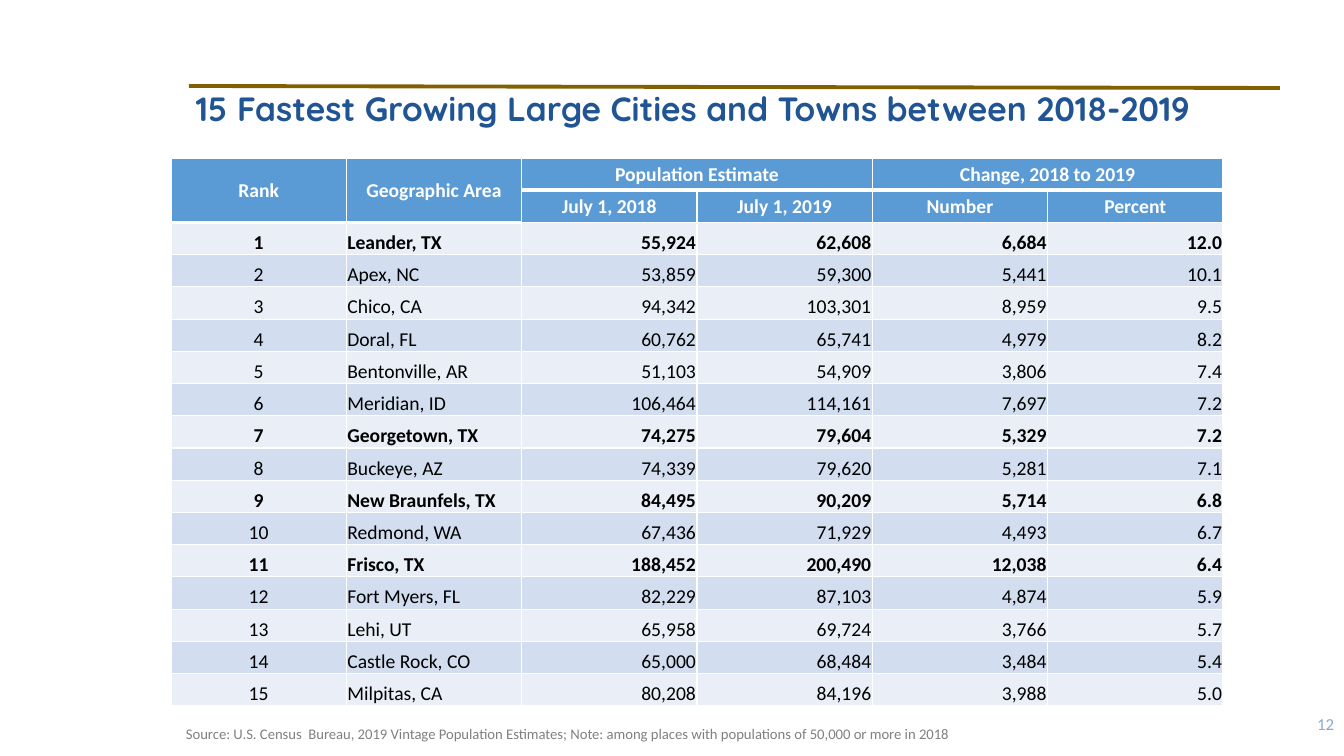
from lxml.etree import SubElement
from pptx import Presentation
from pptx.dml.color import RGBColor
from pptx.enum.shapes import MSO_CONNECTOR
from pptx.enum.text import MSO_ANCHOR, PP_ALIGN
from pptx.oxml.ns import qn
from pptx.util import Pt

UNIT = 914400 / 100.8
LEFT, MID, RIGHT = PP_ALIGN.LEFT, PP_ALIGN.CENTER, PP_ALIGN.RIGHT

HEADS = [
    ["Rank", "Geographic Area", "Population Estimate", "", "Change, 2018 to 2019", ""],
    ["", "", "July 1, 2018", "July 1, 2019", "Number", "Percent"],
]
MERGES = [(0, 0, 1, 0), (0, 1, 1, 1), (0, 2, 0, 3), (0, 4, 0, 5)]
CITIES = [
    ["Leander, TX", "55,924", "62,608", "6,684", "12.0"],
    ["Apex, NC", "53,859", "59,300", "5,441", "10.1"],
    ["Chico, CA", "94,342", "103,301", "8,959", "9.5"],
    ["Doral, FL", "60,762", "65,741", "4,979", "8.2"],
    ["Bentonville, AR", "51,103", "54,909", "3,806", "7.4"],
    ["Meridian, ID", "106,464", "114,161", "7,697", "7.2"],
    ["Georgetown, TX", "74,275", "79,604", "5,329", "7.2"],
    ["Buckeye, AZ", "74,339", "79,620", "5,281", "7.1"],
    ["New Braunfels, TX", "84,495", "90,209", "5,714", "6.8"],
    ["Redmond, WA", "67,436", "71,929", "4,493", "6.7"],
    ["Frisco, TX", "188,452", "200,490", "12,038", "6.4"],
    ["Fort Myers, FL", "82,229", "87,103", "4,874", "5.9"],
    ["Lehi, UT", "65,958", "69,724", "3,766", "5.7"],
    ["Castle Rock, CO", "65,000", "68,484", "3,484", "5.4"],
    ["Milpitas, CA", "80,208", "84,196", "3,988", "5.0"],
]


def px(num):
    return round(num * UNIT)


def tint(code):
    return RGBColor.from_string(code)


def put(frame, text, size=14, color="000000", bold=False, font="Calibri",
        align=LEFT, space=None):
    para = frame.paragraphs[0]
    para.alignment = align
    para.line_spacing = space
    run = para.add_run()
    run.text = text
    run.font.name = font
    run.font.size = Pt(size)
    run.font.bold = bold
    run.font.color.rgb = tint(color)


def label(slide, area, text, anchor=MSO_ANCHOR.TOP, **style):
    frame = slide.shapes.add_textbox(*map(px, area)).text_frame
    frame.word_wrap = True
    frame.vertical_anchor = anchor
    put(frame, text, **style)


def rule(slide, ends, color, width):
    line = slide.shapes.add_connector(MSO_CONNECTOR.STRAIGHT, *map(px, ends))
    line.line.color.rgb = tint(color)
    line.line.width = Pt(width)
    SubElement(line._element.spPr, qn("a:effectLst"))


def edge(cell, base):
    props = cell._tc.get_or_add_tcPr()
    for side, width in (("L", 1), ("R", 1), ("T", 1), ("B", base)):
        line = SubElement(props, qn(f"a:ln{side}"), w=str(Pt(width)))
        fill = SubElement(line, qn("a:solidFill"))
        SubElement(fill, qn("a:srgbClr"), val="FFFFFF")


def paint(cell, text, fill, anchor, base=1, **style):
    edge(cell, base)
    cell.fill.solid()
    cell.fill.fore_color.rgb = tint(fill)
    cell.vertical_anchor = anchor
    cell.margin_left = cell.margin_right = cell.margin_top = px(1)
    cell.margin_bottom = 0
    if text:
        put(cell.text_frame, text, **style)


def grid(slide, area):
    left, top, width, height = map(px, area)
    count = len(HEADS) + len(CITIES)
    table = slide.shapes.add_table(count, 6, left, top, width, height).table
    for col in table.columns:
        col.width = width // 6
    for row in table.rows:
        row.height = height // count
    for span in MERGES:
        table.cell(*span[:2]).merge(table.cell(*span[2:]))

    # Header rows
    for r, heads in enumerate(HEADS):
        for c, text in enumerate(heads):
            paint(table.cell(r, c), text, "5B9BD5", MSO_ANCHOR.MIDDLE,
                  base=1 if r else 3, color="FFFFFF", bold=True, align=MID)

    # City rows, with Texas in bold
    aligns = [MID, LEFT] + [RIGHT] * 4
    for rank, city in enumerate(CITIES, 1):
        fill = "EAEFF7" if rank % 2 else "D2DEEF"
        bold = city[0].endswith("TX")
        for c, text in enumerate([str(rank)] + city):
            paint(table.cell(rank + 1, c), text, fill, MSO_ANCHOR.BOTTOM,
                  bold=bold, align=aligns[c])


def main():
    deck = Presentation()
    deck.slide_width, deck.slide_height = px(1344), px(756)
    slide = deck.slides.add_slide(deck.slide_layouts[6])

    # Rule and table
    rule(slide, (189, 86, 1280, 88), "806000", 2.75)
    grid(slide, (171, 158, 1052, 548))

    # Page number, source and title
    label(slide, (1224, 707, 120, 34), "12", anchor=MSO_ANCHOR.MIDDLE,
          size=12, color="8FA5D1", align=RIGHT)
    label(slide, (176, 719, 949, 29),
          "Source: U.S. Census  Bureau, 2019 Vintage Population Estimates; "
          "Note: among places with populations of 50,000 or more in 2018",
          size=10.5, color="808080", space=1.07)
    label(slide, (186, 88, 1091, 605),
          "15 Fastest Growing Large Cities and Towns between 2018-2019",
          size=24, color="205493", bold=True, font="Quicksand", space=0.9)

    deck.save("out.pptx")


if __name__ == "__main__":
    main()
